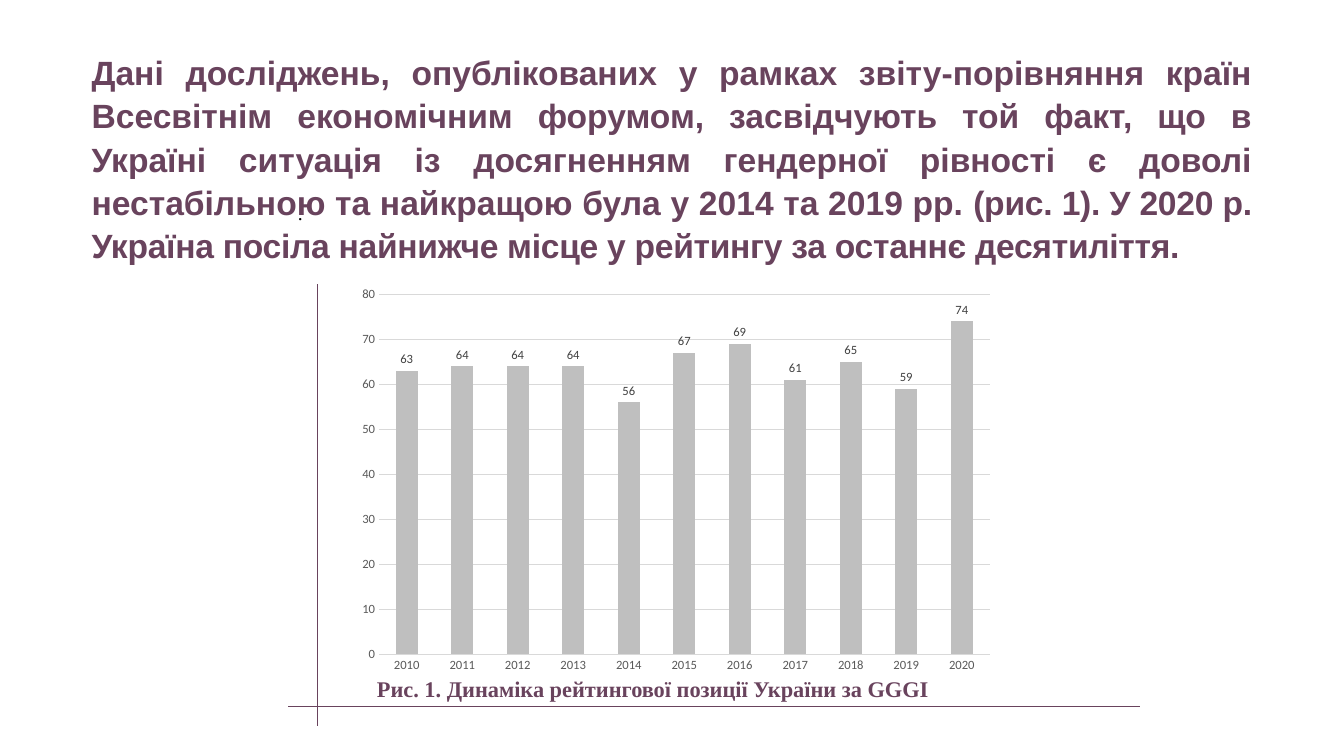
"""Build a slide with Ukraine's gender gap ranking chart."""
from lxml import etree
from pptx import Presentation
from pptx import util as u
from pptx.chart.data import CategoryChartData
from pptx.dml.color import RGBColor
from pptx.enum import chart as charts, shapes, text
from pptx.oxml import ns

PLUM = RGBColor(0x69, 0x43, 0x5D)
BLACK = RGBColor(0, 0, 0)
BAR_GRAY = RGBColor(0xBF, 0xBF, 0xBF)
GRID_GRAY = RGBColor(0xD9, 0xD9, 0xD9)
AXIS_GRAY = RGBColor(0x59, 0x59, 0x59)
LABEL_GRAY = RGBColor(0x40, 0x40, 0x40)

STATEMENT = (
    "Дані досліджень, опублікованих у рамках звіту-порівняння країн "
    "Всесвітнім економічним форумом, засвідчують той факт, що в Україні "
    "ситуація із досягненням гендерної рівності є доволі нестабільною "
    "та найкращою була у 2014 та 2019 рр. ",
    "(рис. 1). У 2020 р. Україна посіла найнижче місце у рейтингу "
    "за останнє десятиліття.",
)
CAPTION = "Рис. 1. Динаміка рейтингової позиції України за GGGI"
FIRST_YEAR = 2010
RANKS = (63, 64, 64, 64, 56, 67, 69, 61, 65, 59, 74)
PLOT_AREA = {"x": 0.067, "y": 0.025, "w": 0.903, "h": 0.89}
RULES = (
    (8, 7.16, 8, 18.29),
    (7.26, 17.81, 28.73, 17.81),
)


def style_font(font, name, size, color, bold=False):
    font.name = name
    font.size = u.Pt(size)
    font.color.rgb = color
    font.bold = bold


def add_text(slide, box, runs, name, size, color, bold=False,
             anchor=text.MSO_ANCHOR.TOP, wrap=True):
    frame = slide.shapes.add_textbox(*map(u.Cm, box)).text_frame
    frame.word_wrap = wrap
    frame.vertical_anchor = anchor
    paragraph = frame.paragraphs[0]
    for content in runs:
        paragraph.add_run().text = content
    style_font(paragraph.font, name, size, color, bold)
    return paragraph


def add_rank_chart(slide):
    data = CategoryChartData()
    data.categories = [str(FIRST_YEAR + i) for i in range(len(RANKS))]
    data.add_series("Series 1", RANKS)
    chart = slide.shapes.add_chart(
        charts.XL_CHART_TYPE.COLUMN_CLUSTERED,
        u.Cm(8.41), u.Cm(7.16), u.Cm(17.04), u.Cm(10.19), data).chart
    chart.has_legend = False
    chart.has_title = False
    style_font(chart.font, "Calibri", 10, BLACK)

    for axis in (chart.category_axis, chart.value_axis):
        axis.major_tick_mark = charts.XL_TICK_MARK.NONE
        axis.minor_tick_mark = charts.XL_TICK_MARK.NONE
        axis.format.line.fill.background()
        style_font(axis.tick_labels.font, "Calibri", 9, AXIS_GRAY)
    value_axis = chart.value_axis
    value_axis.minimum_scale = 0
    value_axis.maximum_scale = 80
    value_axis.major_unit = 10
    value_axis.major_gridlines.format.line.color.rgb = GRID_GRAY
    value_axis.major_gridlines.format.line.width = u.Pt(0.75)

    plot = chart.plots[0]
    plot.gap_width = 150
    plot.vary_by_categories = False
    series = plot.series[0]
    series.format.fill.solid()
    series.format.fill.fore_color.rgb = BAR_GRAY
    labels = series.data_labels
    labels.show_value = True
    labels.position = charts.XL_LABEL_POSITION.OUTSIDE_END
    style_font(labels.font, "Calibri", 9, LABEL_GRAY)
    place_plot(chart)


def place_plot(chart):
    plot_area = chart.plots[0]._element.getparent()
    for old_layout in plot_area.findall(ns.qn("c:layout")):
        plot_area.remove(old_layout)
    layout = etree.Element(ns.qn("c:layout"))
    manual = etree.SubElement(layout, ns.qn("c:manualLayout"))
    settings = {"layoutTarget": "inner", "xMode": "edge", "yMode": "edge", **PLOT_AREA}
    for tag, value in settings.items():
        etree.SubElement(manual, ns.qn(f"c:{tag}")).set("val", str(value))
    plot_area.insert(0, layout)


def add_rule(slide, ends):
    line = slide.shapes.add_connector(
        shapes.MSO_CONNECTOR.STRAIGHT, *map(u.Cm, ends))
    line.line.color.rgb = PLUM
    line.line.width = u.Pt(0.5)
    etree.SubElement(line._element.spPr, ns.qn("a:effectLst"))


def main():
    presentation = Presentation()
    presentation.slide_width = u.Cm(33.87)
    presentation.slide_height = u.Cm(19.05)
    slide = presentation.slides.add_slide(presentation.slide_layouts[6])

    add_text(slide, (7.26, 4.95, 0.64, 1.63), (".",),
             "Times New Roman", 14, BLACK, wrap=False)
    add_rank_chart(slide)
    add_text(slide, (9.25, 16.87, 15.37, 0.94), (CAPTION,),
             "Times New Roman", 16, PLUM, True, text.MSO_ANCHOR.MIDDLE)
    statement = add_text(slide, (2.06, 1.12, 29.74, 5.66), STATEMENT,
                         "Arial", 24, PLUM, True)
    statement.alignment = text.PP_ALIGN.JUSTIFY
    statement.line_spacing = 1.07
    statement.space_after = u.Pt(8)
    statement.runs[1].font._element.set("spc", "-20")
    for ends in RULES:
        add_rule(slide, ends)
    presentation.save("out.pptx")


if __name__ == "__main__":
    main()
